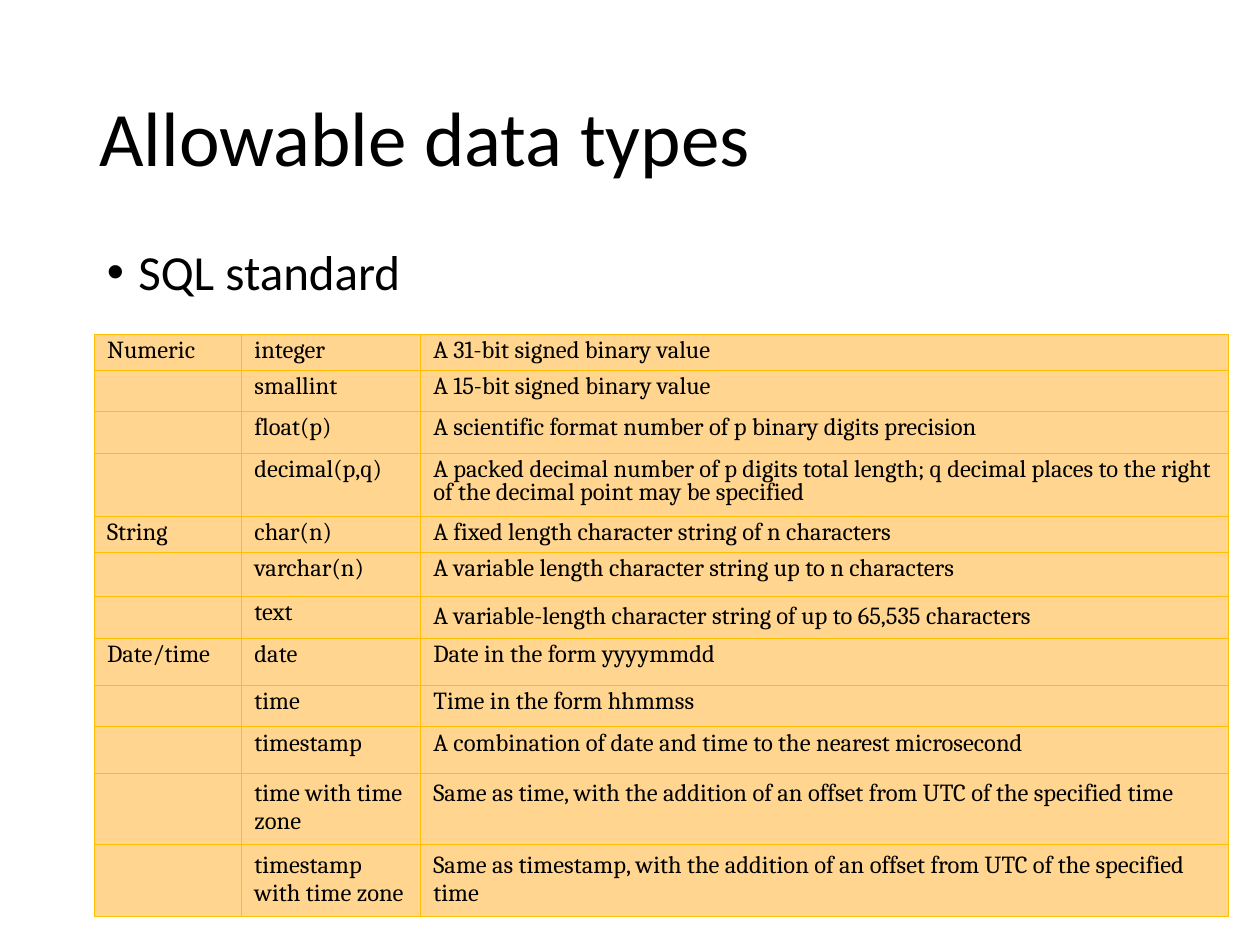
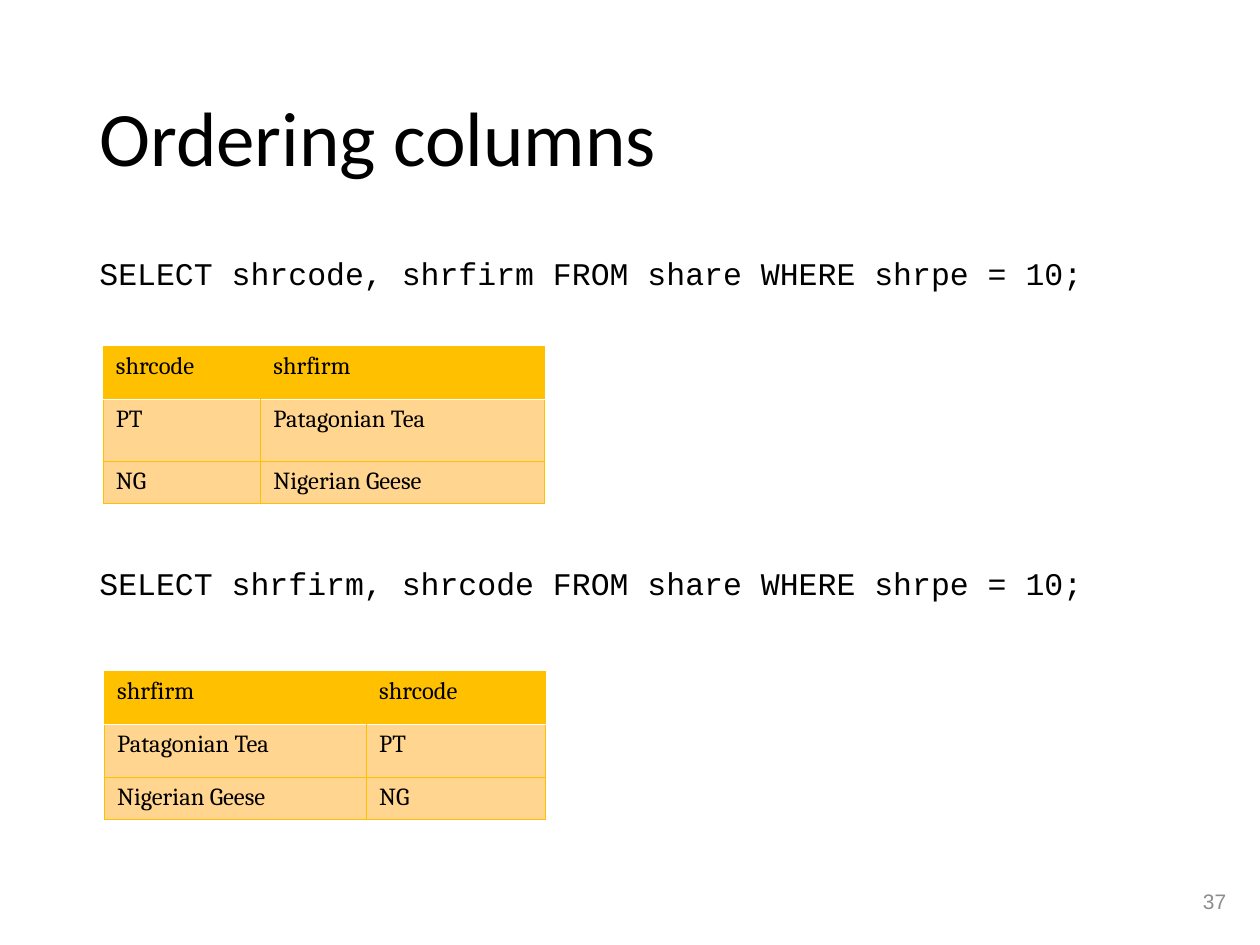
from lxml.etree import SubElement
from pptx import Presentation
from pptx.dml.color import RGBColor
from pptx.enum.text import MSO_ANCHOR, PP_ALIGN
from pptx.oxml.ns import qn
from pptx.util import Inches, Pt

BLACK, WHITE, GREY = "000000", "FFFFFF", "8C8C8C"
GOLD, PALE = "FFC000", "FFD58F"
TITLE = {"name": "Calibri", "size": Pt(44), "color": BLACK}
BULLET = {"name": "Calibri", "size": Pt(28), "color": BLACK}
QUERY = {"name": "Courier New", "size": Pt(18), "color": BLACK}
CELL = {"name": "Cambria", "size": Pt(14), "color": BLACK}
NUMBER = {"name": "Arial", "size": Pt(12), "color": GREY}
TIGHT = {"line_spacing": 0.8, "space_before": Pt(5)}
LOOSE = {"space_before": Pt(3)}
BODY = {"line_spacing": 0.9, "space_before": Pt(10)}

TYPE_COLS = [1.17, 1.42, 6.41]
TYPES = [
    (0.28, "Numeric", "integer", "A 31-bit signed binary value"),
    (0.33, "", "smallint", "A 15-bit signed binary value"),
    (0.33, "", "float(p)", "A scientific format number of p binary digits precision"),
    (0.5, "", "decimal(p,q)", "A packed decimal number of p digits total length; "
     "q decimal places to the right of the decimal point may be specified"),
    (0.28, "String", "char(n)", "A fixed length character string of n characters"),
    (0.35, "", "varchar(n)", "A variable length character string up to n characters"),
    (0.33, "", "text", "A variable-length character string of up to 65,535 characters"),
    (0.37, "Date/time", "date", "Date in the form yyyymmdd"),
    (0.33, "", "time", "Time in the form hhmmss"),
    (0.37, "", "timestamp", "A combination of date and time to the nearest microsecond"),
    (0.55, "", "time with time zone",
     "Same as time, with the addition of an offset from UTC of the specified time"),
    (0.55, "", "timestamp with time zone",
     "Same as timestamp, with the addition of an offset from UTC of the specified time"),
]
LOOSE_CELLS = {(6, 2), (10, 1), (10, 2), (11, 1), (11, 2)}
SHARES = [("shrcode", "shrfirm"), ("PT", "Patagonian Tea"), ("NG", "Nigerian Geese")]


def rgb(color):
    """Turn a hex string into a colour."""
    return RGBColor.from_string(color)


def write(p, text, font, layout):
    """Put one formatted run into a paragraph."""
    for name, value in layout.items():
        setattr(p, name, value)
    r = p.add_run()
    r.text = text
    for name, value in font.items():
        if name == "color":
            r.font.color.rgb = rgb(value)
        else:
            setattr(r.font, name, value)


def add_text(slide, box, lines, font, anchor=MSO_ANCHOR.TOP):
    """Add a wrapped text box with one paragraph per (text, layout) pair."""
    tf = slide.shapes.add_textbox(*map(Inches, box)).text_frame
    tf.word_wrap = True
    tf.vertical_anchor = anchor
    for i, (text, layout) in enumerate(lines):
        p = tf.add_paragraph() if i else tf.paragraphs[0]
        write(p, text, font, layout)
    return tf


def add_bullet(p):
    """Give a paragraph a hanging round bullet."""
    pPr = p._p.get_or_add_pPr()
    pPr.set("marL", str(Inches(0.25)))
    pPr.set("indent", str(-Inches(0.25)))
    SubElement(pPr, qn("a:buFont"), typeface="Arial")
    SubElement(pPr, qn("a:buChar"), char="•")


def set_borders(cell, **sides):
    """Draw thin gold cell borders, with (colour, points) or None for other sides."""
    tcPr = cell._tc.get_or_add_tcPr()
    for i, side in enumerate("LRTB"):
        line = sides.get(side, (GOLD, 0.5))
        ln = SubElement(tcPr, qn(f"a:ln{side}"))
        tcPr.remove(ln)
        tcPr.insert(i, ln)
        if line is None:
            SubElement(ln, qn("a:noFill"))
            continue
        color, width = line
        ln.set("w", str(Pt(width)))
        SubElement(SubElement(ln, qn("a:solidFill")), qn("a:srgbClr"), val=color)


def fill_cell(cell, text, layout, fill=PALE):
    """Set the fill and the text of one table cell."""
    cell.fill.solid()
    cell.fill.fore_color.rgb = rgb(fill)
    p = cell.text_frame.paragraphs[0]
    if text:
        write(p, text, CELL, layout)
    else:
        p._p.get_or_add_endParaRPr().set("sz", "1000")


def add_grid(slide, left, top, cols, heights):
    """Add an unstyled table with the given column widths and row heights."""
    box = map(Inches, (left, top, sum(cols), sum(heights)))
    table = slide.shapes.add_table(len(heights), len(cols), *box).table
    table.first_row = table.horz_banding = False
    for column, width in zip(table.columns, cols):
        column.width = Inches(width)
    for row, height in zip(table.rows, heights):
        row.height = Inches(height)
    return table


def add_types_table(slide, left, top):
    """Add the table of SQL data types."""
    table = add_grid(slide, left, top, TYPE_COLS, [row[0] for row in TYPES])
    for r, (_, *texts) in enumerate(TYPES):
        for c, text in enumerate(texts):
            cell = table.cell(r, c)
            fill_cell(cell, text, LOOSE if (r, c) in LOOSE_CELLS else TIGHT)
            set_borders(cell)


def add_result_table(slide, left, top, cols, heights, rows):
    """Add a query result with a gold header row."""
    table = add_grid(slide, left, top, cols, heights)
    rule = (WHITE, 1)
    for r, texts in enumerate(rows):
        for c, text in enumerate(texts):
            cell = table.cell(r, c)
            fill_cell(cell, text, LOOSE, PALE if r else GOLD)
            sides = {}
            if r == 0:
                sides = {"B": rule, "L" if c else "R": None}
            elif r == 1:
                sides = {"T": rule}
            set_borders(cell, **sides)


def add_slide(prs, title):
    """Add a blank slide with the shared title."""
    slide = prs.slides.add_slide(prs.slide_layouts[6])
    add_text(slide, (0.69, 0.4, 8.62, 1.45), [(title, {"line_spacing": 0.9})],
             TITLE, MSO_ANCHOR.MIDDLE)
    return slide


def add_types_slide(prs):
    """Build the slide on data types."""
    slide = add_slide(prs, "Allowable data types")
    tf = add_text(slide, (0.75, 1.92, 8.5, 0.7), [("SQL standard", BODY)], BULLET)
    add_bullet(tf.paragraphs[0])
    add_types_table(slide, 0.75, 2.65)


def add_ordering_slide(prs):
    """Build the slide on column order."""
    slide = add_slide(prs, "Ordering columns")
    queries = [
        ("SELECT shrcode, shrfirm FROM share WHERE shrpe = 10;", BODY),
        ("SELECT shrfirm, shrcode FROM share WHERE shrpe = 10;",
         {**BODY, "space_before": Pt(158)}),
    ]
    add_text(slide, (0.69, 2, 8.62, 4.76), queries, QUERY)
    add_result_table(slide, 0.82, 2.75, [1.25, 2.25], [0.42, 0.49, 0.33], SHARES)
    swapped = [row[::-1] for row in SHARES]
    add_result_table(slide, 0.83, 5.33, [2.08, 1.42], [0.42, 0.42, 0.33], swapped)
    add_text(slide, (7.58, 6.95, 2.25, 0.4), [("37", {"alignment": PP_ALIGN.RIGHT})],
             NUMBER, MSO_ANCHOR.MIDDLE)


def main():
    """Build and save the presentation."""
    prs = Presentation()
    prs.slide_width, prs.slide_height = Inches(10), Inches(7.5)
    add_types_slide(prs)
    add_ordering_slide(prs)
    prs.save("out.pptx")


if __name__ == "__main__":
    main()
